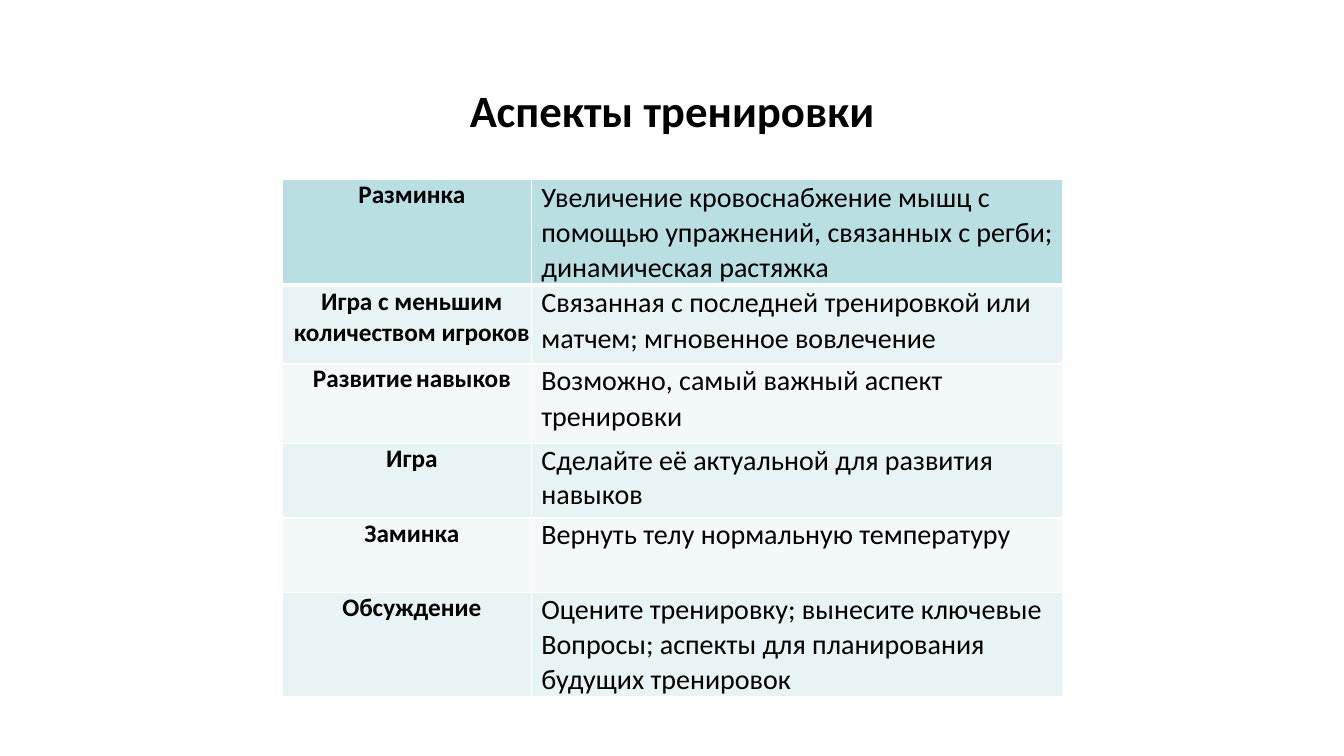
import pptx
import pptx.util
import pptx.dml.color
import pptx.enum.text
import pptx.oxml.ns
import lxml.etree

Inches = pptx.util.Inches
Pt = pptx.util.Pt
ALIGN = pptx.enum.text.PP_ALIGN
FONT = "Calibri"
COLORS = {"text": "000000", "line": "FFFFFF", "head": "BADFE2",
          "odd": "E7F3F4", "even": "F3F8F9"}
WIDTHS = [2.47, 5.27]
# Row height, line spacing of the name and of the note, name runs, note paragraphs
STAGES = [
    (0.73, 1.0, 1.03, [("Разминка", 18)],
     ["Увеличение кровоснабжение мышц с помощью упражнений, "
      "связанных с регби; динамическая растяжка"]),
    (0.78, 1.03, 1.03, [("Игра с меньшим количеством игроков", 18)],
     ["Связанная с последней тренировкой или матчем; мгновенное вовлечение"]),
    (0.79, 1.0, 1.0, [("Развитие", 18), (" ", 11), ("навыков", 18)],
     ["Возможно, самый важный аспект", "тренировки"]),
    (0.74, 1.0, 1.0, [("Игра", 18)],
     ["Сделайте её актуальной для развития навыков"]),
    (0.74, 1.0, 1.0, [("Заминка", 18)],
     ["Вернуть телу нормальную температуру"]),
    (0.79, 1.0, 1.0, [("Обсуждение", 18)],
     ["Оцените тренировку; вынесите ключевые",
      "Вопросы; аспекты для планирования будущих тренировок"]),
]


def color(name):
    return pptx.dml.color.RGBColor.from_string(COLORS[name])


def apply(target, values):
    for name, value in values.items():
        setattr(target, name, value)


def add_run(para, text, size, bold):
    run = para.add_run()
    run.text = text
    apply(run.font, {"name": FONT, "size": Pt(size), "bold": bold})
    run.font.color.rgb = color("text")


def add_title(slide, text):
    box = slide.shapes.add_textbox(Inches(1.67), Inches(0.77),
                                   Inches(10), Inches(0.64))
    frame = box.text_frame
    apply(frame, {"word_wrap": True,
                  "vertical_anchor": pptx.enum.text.MSO_ANCHOR.MIDDLE})
    para = frame.paragraphs[0]
    para.alignment = ALIGN.CENTER
    add_run(para, text, 32, True)


def set_edge(cell, side, width):
    props = cell._tc.get_or_add_tcPr()
    qn = pptx.oxml.ns.qn
    edge = lxml.etree.SubElement(props, qn("a:ln" + side), w=str(Pt(width)))
    fill = lxml.etree.SubElement(edge, qn("a:solidFill"))
    lxml.etree.SubElement(fill, qn("a:srgbClr"), val=COLORS["line"])


def style_cell(cell, row):
    apply(cell, {"margin_left": 0, "margin_right": 0,
                 "margin_top": 0, "margin_bottom": 0})
    edges = {"L": 1, "R": 1, "T": 3 if row == 1 else 1, "B": 1 if row else 3}
    for side, width in edges.items():
        set_edge(cell, side, width)
    cell.fill.solid()
    tone = "head" if row == 0 else "odd" if row % 2 else "even"
    cell.fill.fore_color.rgb = color(tone)


def fill_cell(cell, paras, align, space, bold):
    """Write paragraphs, each a list of (text, size) runs."""
    frame = cell.text_frame
    for index, runs in enumerate(paras):
        para = frame.add_paragraph() if index else frame.paragraphs[0]
        para._p.get_or_add_pPr().set("marL", str(Inches(0.1)))
        apply(para, {"alignment": align, "line_spacing": space})
        if index:
            para.space_before = Pt(0.9)
        for text, size in runs:
            add_run(para, text, size, bold)


def add_stages(slide):
    shape = slide.shapes.add_table(
        len(STAGES), len(WIDTHS), Inches(2.8), Inches(1.78),
        Inches(sum(WIDTHS)), Inches(sum(stage[0] for stage in STAGES)))
    table = shape.table
    table.horz_banding = False
    for column, width in zip(table.columns, WIDTHS):
        column.width = Inches(width)
    for row, (height, tight, loose, name, notes) in enumerate(STAGES):
        table.rows[row].height = Inches(height)
        left, right = table.cell(row, 0), table.cell(row, 1)
        for cell in (left, right):
            style_cell(cell, row)
        fill_cell(left, [name], ALIGN.CENTER, tight, True)
        fill_cell(right, [[(note, 20)] for note in notes],
                  ALIGN.LEFT, loose, False)


def main():
    deck = pptx.Presentation()
    apply(deck, {"slide_width": Inches(13.33), "slide_height": Inches(7.5)})
    slide = deck.slides.add_slide(deck.slide_layouts[6])
    add_stages(slide)
    add_title(slide, "Аспекты тренировки")
    deck.save("out.pptx")


if __name__ == "__main__":
    main()
